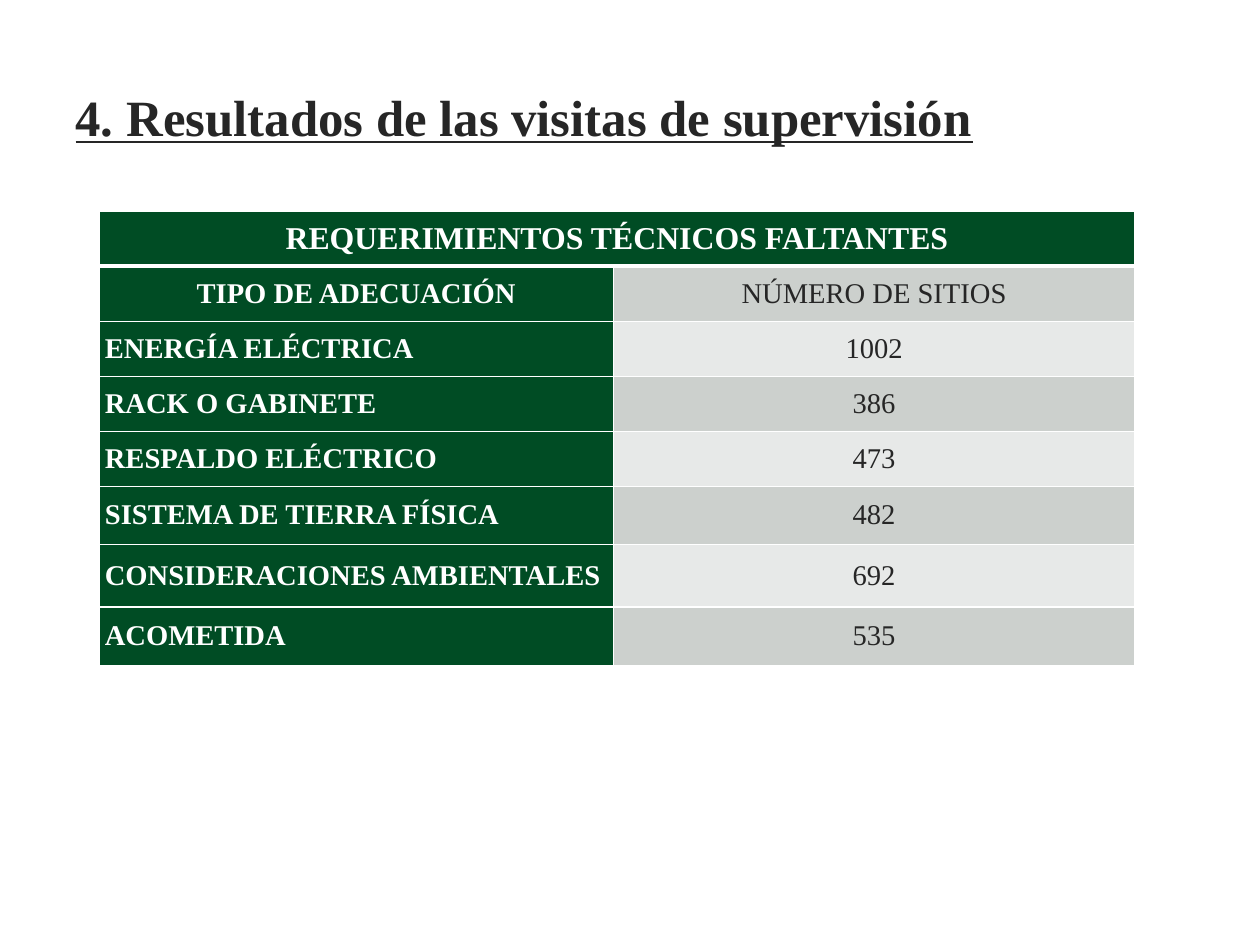
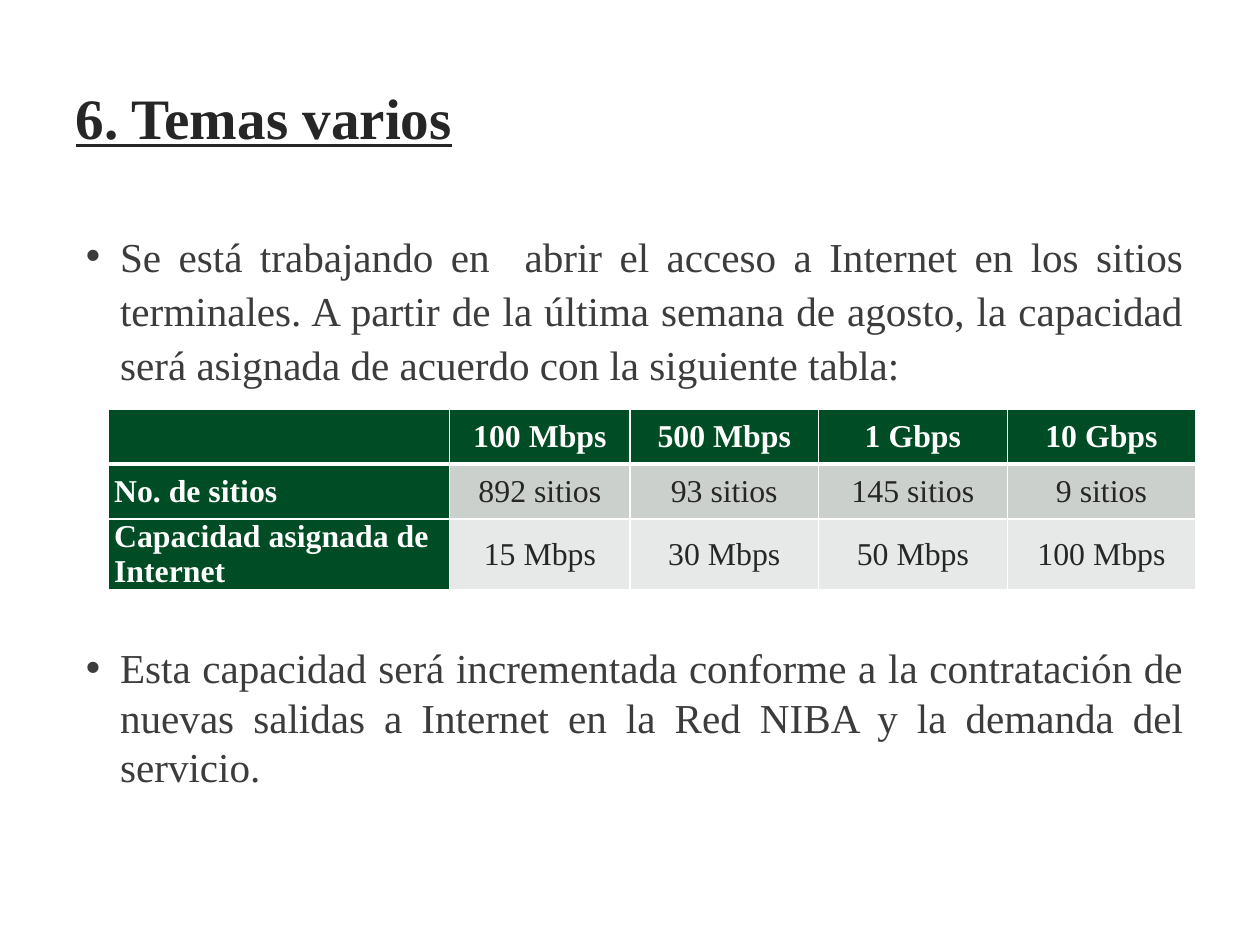
"""Builds two slides on site visits and Internet capacity."""
from lxml import etree
from pptx import Presentation
from pptx import util as u
from pptx.dml.color import RGBColor
from pptx.enum import text as t
from pptx.oxml.ns import qn

W, H = u.Cm(28), u.Cm(21)
FONT = "Times New Roman"
COLORS = {"ink": "262626", "body": "3C3C3C", "white": "FFFFFF",
          "green": "004C24", "dark_band": "CCD0CD", "light_band": "E7E9E8"}
LEFT, CENTER, JUSTIFY = t.PP_ALIGN.LEFT, t.PP_ALIGN.CENTER, t.PP_ALIGN.JUSTIFY
CONTENT_LEFT, CONTENT_WIDTH = 5, 90
ROW = 5.82


def cols(n):
    """Return n hundredths of the slide's width."""
    return u.Emu(round(W * n / 100))


def rows(n):
    """Return n hundredths of the slide's height."""
    return u.Emu(round(H * n / 100))


def rgb(name):
    """Return the named colour."""
    return RGBColor.from_string(COLORS[name])


def put(p, text, size=18, color="ink", bold=False, underline=False, align=LEFT):
    """Write formatted text into a paragraph."""
    p.alignment = align
    r = p.add_run()
    r.text = text
    f = r.font
    f.name, f.size, f.bold, f.underline = FONT, u.Pt(size), bold, underline
    f.color.rgb = rgb(color)


def frame(tf, anchor):
    """Set the wrapping, insets and anchor of a text frame."""
    tf.word_wrap = True
    tf.auto_size = t.MSO_AUTO_SIZE.NONE
    tf.vertical_anchor = anchor
    tf.margin_left = tf.margin_right = u.Inches(0.11)
    tf.margin_top = tf.margin_bottom = u.Inches(0.06)


def add_slide(prs, title, size):
    """Add a title-only slide with the shared title style."""
    s = prs.slides.add_slide(prs.slide_layouts[5])
    s.background.fill.solid()
    s.background.fill.fore_color.rgb = rgb("white")
    sp = s.shapes.title
    sp.left, sp.top = cols(CONTENT_LEFT), rows(3.95)
    sp.width, sp.height = cols(CONTENT_WIDTH), rows(16.7)
    frame(sp.text_frame, t.MSO_ANCHOR.MIDDLE)
    put(sp.text_frame.paragraphs[0], title, size=size, bold=True, underline=True)
    return s


def set_borders(cell, top, bottom):
    """Draw white borders round a cell, with widths in points."""
    tc_pr = cell._tc.get_or_add_tcPr()
    for side, width in (("L", 1), ("R", 1), ("T", top), ("B", bottom)):
        ln = etree.SubElement(tc_pr, qn(f"a:ln{side}"), w=str(u.Pt(width)))
        fill = etree.SubElement(ln, qn("a:solidFill"))
        etree.SubElement(fill, qn("a:srgbClr"), val=COLORS["white"])


def fill_cell(cell, text, i, j, size):
    """Format one cell by its row i and column j."""
    is_head = i == 0 or j == 0
    set_borders(cell, top=3 if i == 1 else 1, bottom=3 if i == 0 else 1)
    cell.fill.solid()
    band = "dark_band" if i % 2 else "light_band"
    cell.fill.fore_color.rgb = rgb("green" if is_head else band)
    cell.vertical_anchor = t.MSO_ANCHOR.MIDDLE
    cell.margin_left = cell.margin_right = u.Inches(0.05)
    cell.margin_top = cell.margin_bottom = 0
    if text:
        is_label = j == 0 and i > 0 and text != "TIPO DE ADECUACIÓN"
        put(cell.text_frame.paragraphs[0], text, size=size, bold=is_head,
            color="white" if is_head else "ink",
            align=LEFT if is_label else CENTER)


def add_grid(s, left, top, widths, heights, data, size, head_size=20):
    """Add a table with a green header row and label column."""
    table = s.shapes.add_table(len(heights), len(widths), cols(left), rows(top),
                               cols(sum(widths)), rows(sum(heights))).table
    for column, width in zip(table.columns, widths):
        column.width = cols(width)
    for row, height in zip(table.rows, heights):
        row.height = rows(height)
    for i, line in enumerate(data):
        for j, text in enumerate(line):
            fill_cell(table.cell(i, j), text, i, j, size if i else head_size)
    return table


def add_bullets(s, items):
    """Add justified bullets from (text, line spacing, points before)."""
    sp = s.shapes.add_textbox(cols(CONTENT_LEFT), rows(23.2),
                              cols(CONTENT_WIDTH), rows(63.8))
    tf = sp.text_frame
    frame(tf, t.MSO_ANCHOR.TOP)
    for i, (text, spacing, before) in enumerate(items):
        p = tf.add_paragraph() if i else tf.paragraphs[0]
        p.line_spacing, p.space_before = spacing, u.Pt(before)
        p_pr = p._p.get_or_add_pPr()
        p_pr.set("marL", str(u.Inches(0.39)))
        p_pr.set("indent", str(u.Inches(-0.3)))
        etree.SubElement(p_pr, qn("a:buFont"), typeface="Arial")
        etree.SubElement(p_pr, qn("a:buChar"), char="•")
        put(p, text, size=25.9, color="body", align=JUSTIFY)


def requirements(prs):
    """Build the slide on missing technical requirements."""
    s = add_slide(prs, "4. Resultados de las visitas de supervisión", 32)
    data = [("REQUERIMIENTOS TÉCNICOS FALTANTES", ""),
            ("TIPO DE ADECUACIÓN", "NÚMERO DE SITIOS"),
            ("ENERGÍA ELÉCTRICA", "1002"),
            ("RACK O GABINETE", "386"),
            ("RESPALDO ELÉCTRICO", "473"),
            ("SISTEMA DE TIERRA FÍSICA", "482"),
            ("CONSIDERACIONES AMBIENTALES", "692"),
            ("ACOMETIDA", "535")]
    table = add_grid(s, 7.87, 22.35, [40.8, 41.4], [ROW] * 5 + [6.15, 6.65, 6.15],
                     data, size=18)
    table.cell(0, 0).merge(table.cell(0, 1))


def capacity(prs):
    """Build the slide on Internet capacity."""
    s = add_slide(prs, "6. Temas varios", 36)
    add_bullets(s, [
        ("Se está trabajando en  abrir el acceso a Internet en los sitios "
         "terminales. A partir de la última semana de agosto, la capacidad "
         "será asignada de acuerdo con la siguiente tabla:", 1.1, 0),
        ("Esta capacidad será incrementada conforme a la contratación de "
         "nuevas salidas a Internet en la Red NIBA y la demanda del servicio.",
         1.0, 160)])
    data = [("", "100 Mbps", "500 Mbps", "1 Gbps", "10 Gbps"),
            ("No. de sitios", "892 sitios", "93 sitios", "145 sitios", "9 sitios"),
            ("Capacidad asignada de Internet", "15 Mbps", "30 Mbps", "50 Mbps",
             "100 Mbps")]
    add_grid(s, 8.6, 43.3, [27.1, 14.3] + [14.97] * 3, [ROW, ROW, 7.4],
             data, size=20)


def main():
    """Build and save the presentation."""
    prs = Presentation()
    prs.slide_width, prs.slide_height = W, H
    requirements(prs)
    capacity(prs)
    prs.save("out.pptx")


if __name__ == "__main__":
    main()
